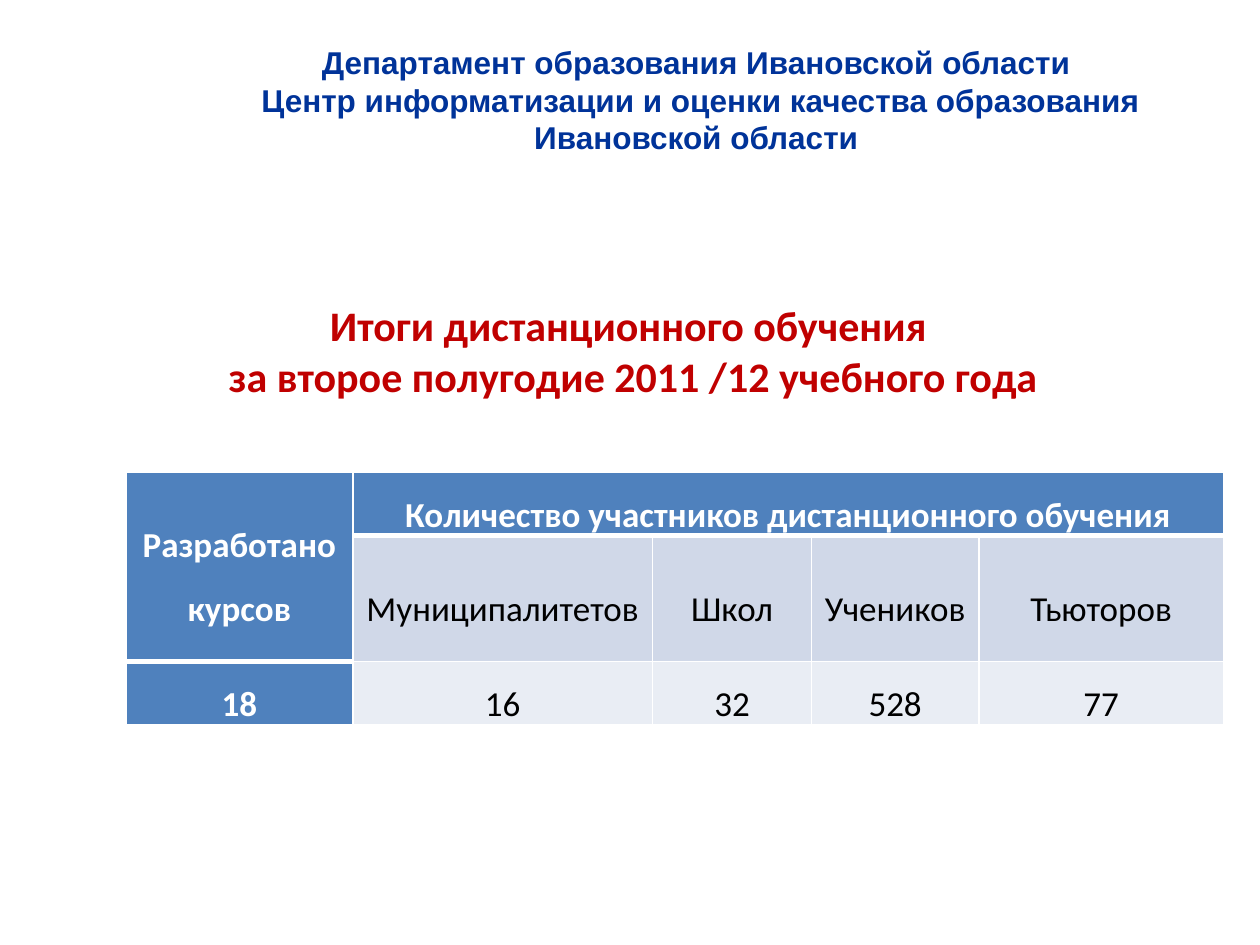
"""Build a slide with the results of distance learning."""
from lxml import etree
from pptx import Presentation
from pptx.dml.color import RGBColor
from pptx.enum.text import MSO_ANCHOR, MSO_AUTO_SIZE, PP_ALIGN
from pptx.oxml.ns import qn
from pptx.util import Inches, Pt

CENTER = PP_ALIGN.CENTER
MIDDLE = MSO_ANCHOR.MIDDLE
GROW = MSO_AUTO_SIZE.SHAPE_TO_FIT_TEXT
HUES = {
    "navy": "003399", "red": "C00000", "white": "FFFFFF", "black": "000000",
    "blue": "4F81BD", "band": "D0D8E8", "pale": "E9EDF4",
}


def write(frame, lines, font, size, hue, bold=True, space=None):
    for i, line in enumerate(lines):
        para = frame.paragraphs[0] if i == 0 else frame.add_paragraph()
        para.alignment = CENTER
        para.line_spacing = space
        run = para.add_run()
        run.text = line
        run.font.name = font
        run.font.size = Pt(size)
        run.font.bold = bold
        run.font.color.rgb = RGBColor.from_string(HUES[hue])


def edge(cell, side, width):
    line = etree.SubElement(cell._tc.get_or_add_tcPr(), qn(f"a:ln{side}"), w=str(Pt(width)))
    fill = etree.SubElement(line, qn("a:solidFill"))
    etree.SubElement(fill, qn("a:srgbClr"), val=HUES["white"])


prs = Presentation()
prs.slide_width = Inches(10)
prs.slide_height = Inches(7.5)
slide = prs.slides.add_slide(prs.slide_layouts[6])

heads = [
    ((1.63, 0.29, 7.79, 1.37), "Arial", 18, "navy",
     ["Департамент образования Ивановской области",
      " Центр информатизации и оценки качества образования Ивановской области"]),
    ((0.69, 2.33, 8.67, 0.91), "Calibri", 24, "red",
     ["Итоги дистанционного обучения ",
      "за второе полугодие 2011 /12 учебного года"]),
]
for place, font, size, hue, lines in heads:
    frame = slide.shapes.add_textbox(*map(Inches, place)).text_frame
    frame.word_wrap = True
    frame.auto_size = GROW
    write(frame, lines, font, size, hue)

rows = [
    [["Разработано", "курсов"], ["Количество участников дистанционного обучения"], [], [], []],
    [[], ["Муниципалитетов"], ["Школ"], ["Учеников"], ["Тьюторов"]],
    [["18"], ["16"], ["32"], ["528"], ["77"]],
]
wides = [1.8, 2.38, 1.26, 1.33, 1.94]
shape = slide.shapes.add_table(
    len(rows), len(wides), Inches(1), Inches(3.75), Inches(sum(wides)), Inches(1.5))
table = shape.table
for col, wide in zip(table.columns, wides):
    col.width = Inches(wide)
for row in table.rows:
    row.height = Inches(0.45)
shape.height = Inches(1.5)
table.cell(0, 0).merge(table.cell(1, 0))
table.cell(0, 1).merge(table.cell(0, 4))

for r, row in enumerate(rows):
    for c, lines in enumerate(row):
        cell = table.cell(r, c)
        head = r == 0 or c == 0
        last = 1 if c == 0 else 0
        edge(cell, "L", 1)
        edge(cell, "R", 1)
        edge(cell, "T", 3 if r == last + 1 else 1)
        edge(cell, "B", 3 if r == last or r + c == 0 else 1)
        cell.fill.solid()
        hue = "blue" if head else "band" if r == 1 else "pale"
        cell.fill.fore_color.rgb = RGBColor.from_string(HUES[hue])
        cell.vertical_anchor = MIDDLE
        cell.margin_left = cell.margin_right = Inches(0.08)
        cell.margin_top = cell.margin_bottom = 0
        write(cell.text_frame, lines, "Calibri", 20, "white" if head else "black", head, 1.5)

prs.save("out.pptx")
